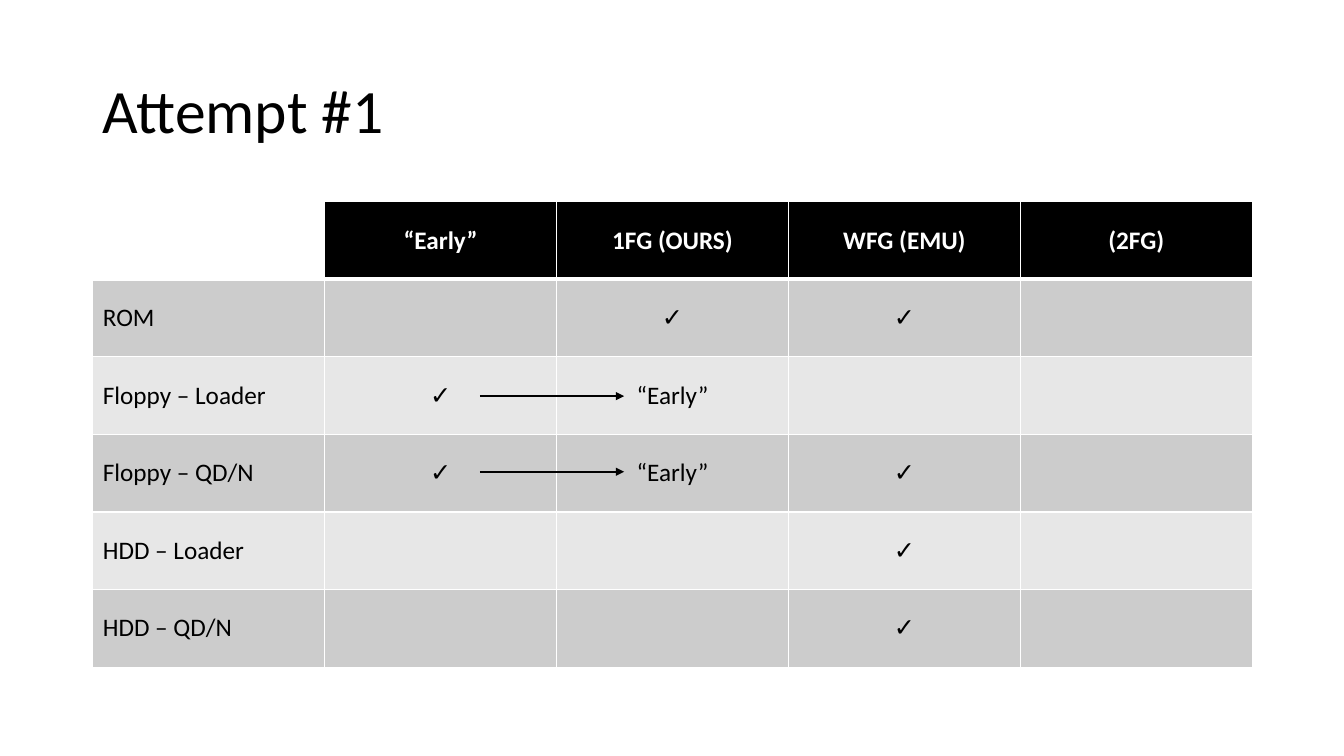
"""Build the "Attempt #1" slide: a table of disk formats with two arrows."""
from dataclasses import dataclass

import lxml.etree
import pptx
import pptx.dml.color
import pptx.enum.dml
import pptx.enum.shapes
import pptx.enum.text
import pptx.oxml
import pptx.oxml.ns
import pptx.util
from pptx.util import Inches

BLACK = pptx.dml.color.RGBColor(0x00, 0x00, 0x00)
WHITE = pptx.dml.color.RGBColor(0xFF, 0xFF, 0xFF)
DARK_BAND = pptx.dml.color.RGBColor(0xCC, 0xCC, 0xCC)
LIGHT_BAND = pptx.dml.color.RGBColor(0xE7, 0xE7, 0xE7)
FONT = "Calibri"
TICK = "✓"
EARLY = "“Early”"
ROWS = [
    ["", EARLY, "1FG (OURS)", "WFG (EMU)", "(2FG)"],
    ["ROM", "", TICK, TICK, ""],
    ["Floppy – Loader", TICK, EARLY, "", ""],
    ["Floppy – QD/N", TICK, EARLY, TICK, ""],
    ["HDD – Loader", "", "", TICK, ""],
    ["HDD – QD/N", "", "", TICK, ""],
]


@dataclass
class Arrow:
    left: float
    right: float
    y: float


ARROWS = [Arrow(4.76, 6.19, y) for y in (3.93, 4.68)]


def style(p, size: float, color: pptx.dml.color.RGBColor, bold: bool = False) -> None:
    p.font.name = FONT
    p.font.size = pptx.util.Pt(size)
    p.font.bold = bold
    p.font.color.rgb = color


def add_title(s, text: str) -> None:
    tf = s.shapes.add_textbox(Inches(0.92), Inches(0.4), Inches(11.5), Inches(1.45)).text_frame
    tf.word_wrap = True
    tf.vertical_anchor = pptx.enum.text.MSO_ANCHOR.MIDDLE
    p = tf.paragraphs[0]
    p.text = text
    p.line_spacing = 0.9
    style(p, 44, BLACK)


def set_borders(cell, top: float, bottom: float) -> None:
    tc_pr = cell._tc.get_or_add_tcPr()
    for side, width in (("L", 1), ("R", 1), ("T", top), ("B", bottom)):
        tc_pr.append(pptx.oxml.parse_xml(
            f'<a:ln{side} {pptx.oxml.ns.nsdecls("a")} w="{pptx.util.Pt(width)}">'
            f'<a:solidFill><a:srgbClr val="{WHITE}"/></a:solidFill></a:ln{side}>'))


def fill_cell(cell, text: str, row: int, col: int) -> None:
    header = row == 0
    set_borders(cell, 3 if row == 1 else 1, 3 if header else 1)
    if header and col == 0:
        cell.fill.background()
    else:
        cell.fill.solid()
        band = DARK_BAND if row % 2 else LIGHT_BAND
        cell.fill.fore_color.rgb = BLACK if header else band
    cell.vertical_anchor = pptx.enum.text.MSO_ANCHOR.MIDDLE
    p = cell.text_frame.paragraphs[0]
    p.text = text
    if col:
        p.alignment = pptx.enum.text.PP_ALIGN.CENTER
    style(p, 18, WHITE if header else BLACK, header or text == TICK)


def add_table(s, rows: list[list[str]]) -> None:
    table = s.shapes.add_table(len(rows), len(rows[0]), Inches(0.92), Inches(2),
                               Inches(11.5), Inches(4.62)).table
    table.horz_banding = False
    table.first_row = False
    for i, texts in enumerate(rows):
        for j, text in enumerate(texts):
            fill_cell(table.cell(i, j), text, i, j)


def add_arrow(s, arrow: Arrow) -> None:
    line = s.shapes.add_connector(pptx.enum.shapes.MSO_CONNECTOR.STRAIGHT, Inches(arrow.left),
                                  Inches(arrow.y), Inches(arrow.right), Inches(arrow.y))
    line.line.color.rgb = BLACK
    line.line.width = pptx.util.Pt(1.5)
    qn = pptx.oxml.ns.qn
    lxml.etree.SubElement(line.line._get_or_add_ln(), qn("a:tailEnd"), type="triangle")
    lxml.etree.SubElement(line._element.spPr, qn("a:effectLst"))


def main() -> None:
    prs = pptx.Presentation()
    prs.slide_width = Inches(13.33)
    prs.slide_height = Inches(7.5)
    s = prs.slides.add_slide(prs.slide_layouts[6])
    add_title(s, "Attempt #1")
    add_table(s, ROWS)
    for arrow in ARROWS:
        add_arrow(s, arrow)
    prs.save("out.pptx")


if __name__ == "__main__":
    main()
